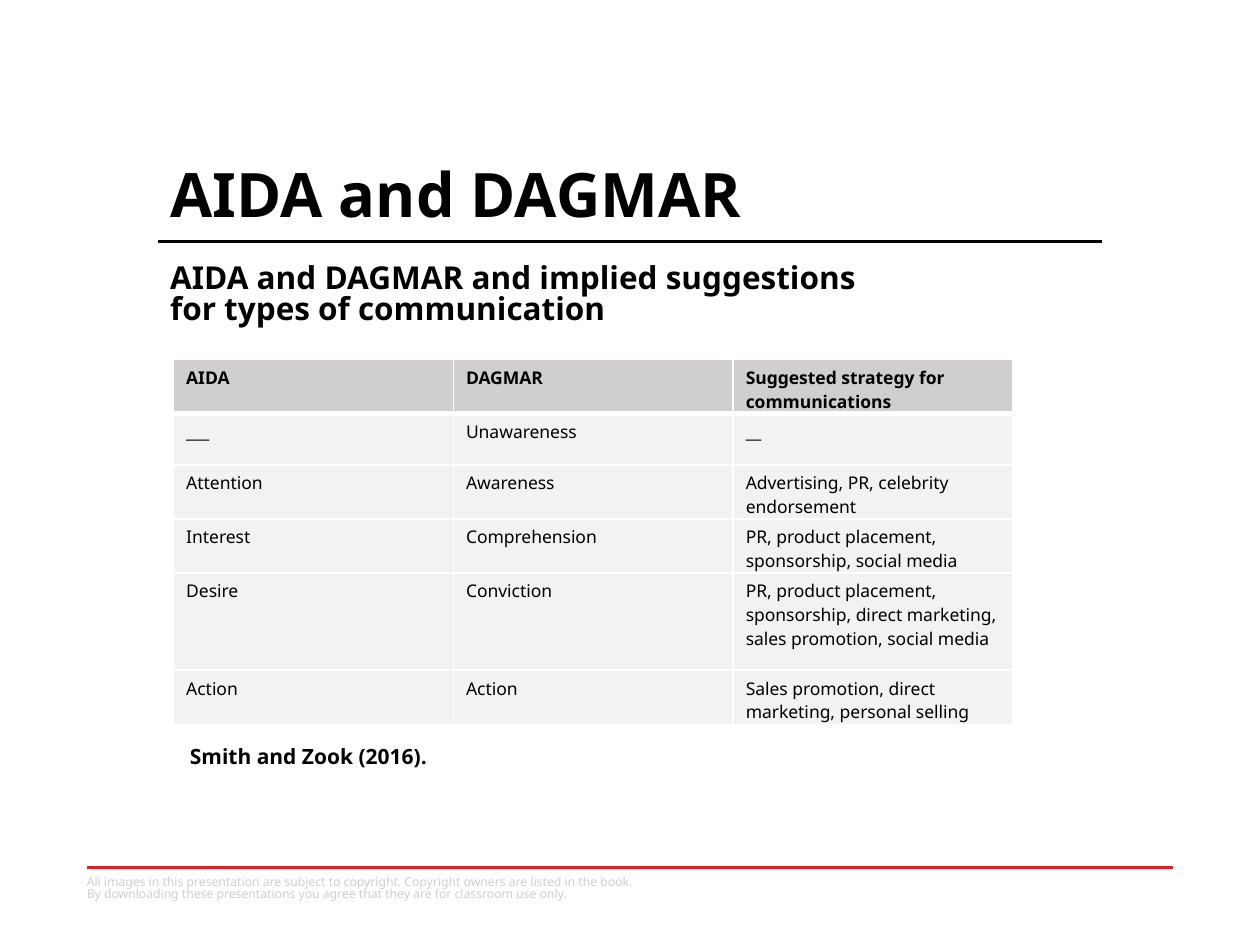
from lxml import etree
from pptx import Presentation
from pptx.dml.color import RGBColor
from pptx.enum.shapes import MSO_CONNECTOR
from pptx.enum.text import MSO_ANCHOR
from pptx.oxml.ns import qn
from pptx.util import Cm, Pt

FONT = "Noto Sans"
COLORS = {
    "text": "000000",
    "accent": "D7222A",
    "header": "D0CECE",
    "body": "F2F2F2",
    "border": "FFFFFF",
    "notice": "D0CECE",
}

TITLE = "AIDA and DAGMAR"
SUBTITLE = ["AIDA and DAGMAR and implied suggestions ", "for types of communication"]
CITATION = "Smith and Zook (2016)."
NOTICE = [
    "All images in this presentation are subject to copyright. "
    "Copyright owners are listed in the book. ",
    "By downloading these presentations you agree that they are for classroom use only.",
]
ROWS = [
    ("AIDA", "DAGMAR", "Suggested strategy for communications"),
    ("___", "Unawareness", "__"),
    ("Attention", "Awareness", "Advertising, PR, celebrity endorsement"),
    ("Interest", "Comprehension", "PR, product placement, sponsorship, social media"),
    ("Desire", "Conviction",
     "PR, product placement, sponsorship, direct marketing, sales promotion, social media"),
    ("Action", "Action", "Sales promotion, direct marketing, personal selling"),
]
ROW_HEIGHTS = [1.09, 1.03, 1.09, 1.09, 1.96, 1.09]
COLUMN_WIDTH = 5.64

# Rules: left, right, y, colour, width in points
RULES = [
    (1.75, 23.65, 17.48, "accent", 1.75),
    (3.18, 22.22, 4.87, "text", 2),
]


def color(name):
    return RGBColor.from_string(COLORS[name])


def write(frame, lines, size, bold=False, color_name="text", spacing=None):
    """Write lines as one paragraph with line breaks between them."""
    frame.word_wrap = True
    paragraph = frame.paragraphs[0]
    if spacing:
        paragraph.line_spacing = spacing
    for index, line in enumerate(lines):
        if index:
            paragraph.add_line_break()
        run = paragraph.add_run()
        run.text = line
        run.font.name = FONT
        run.font.size = Pt(size)
        run.font.bold = bold
        run.font.color.rgb = color(color_name)


def add_text(slide, box, lines, size, **style):
    shape = slide.shapes.add_textbox(*[Cm(value) for value in box])
    write(shape.text_frame, lines, size, **style)


def add_rule(slide, left, right, y, color_name, width):
    rule = slide.shapes.add_connector(
        MSO_CONNECTOR.STRAIGHT, Cm(left), Cm(y), Cm(right), Cm(y))
    rule.line.color.rgb = color(color_name)
    rule.line.width = Pt(width)
    etree.SubElement(rule._element.spPr, qn("a:effectLst"))


def set_borders(cell, widths):
    properties = cell._tc.get_or_add_tcPr()
    for side, width in widths.items():
        line = etree.SubElement(properties, qn(f"a:ln{side}"), w=str(Pt(width)))
        fill = etree.SubElement(line, qn("a:solidFill"))
        etree.SubElement(fill, qn("a:srgbClr"), val=COLORS["border"])


def add_strategy_table(slide):
    table = slide.shapes.add_table(
        len(ROWS), len(ROWS[0]), Cm(3.5), Cm(7.25),
        Cm(COLUMN_WIDTH * len(ROWS[0])), Cm(sum(ROW_HEIGHTS))).table
    for column in table.columns:
        column.width = Cm(COLUMN_WIDTH)
    for row_index, (texts, height) in enumerate(zip(ROWS, ROW_HEIGHTS)):
        table.rows[row_index].height = Cm(height)
        is_header = row_index == 0
        for column_index, text in enumerate(texts):
            cell = table.cell(row_index, column_index)
            cell.margin_bottom = 0
            set_borders(cell, {"L": 1, "R": 1,
                               "T": 3 if row_index == 1 else 1,
                               "B": 3 if is_header else 1})
            cell.fill.solid()
            cell.fill.fore_color.rgb = color("header" if is_header else "body")
            write(cell.text_frame, [text], 10, bold=is_header)


def main():
    presentation = Presentation()
    presentation.slide_width, presentation.slide_height = Cm(25.4), Cm(19.05)
    slide = presentation.slides.add_slide(presentation.slide_layouts[5])

    # Rules under the title and above the notice
    for rule in RULES:
        add_rule(slide, *rule)

    # Title
    title = slide.shapes.title
    title.left, title.top, title.width, title.height = Cm(3.18), Cm(1.02), Cm(19.02), Cm(3.68)
    title.text_frame.vertical_anchor = MSO_ANCHOR.BOTTOM
    title.text_frame.margin_bottom = Cm(0.05)
    write(title.text_frame, [TITLE], 35, bold=True, spacing=0.9)
    title.text_frame.paragraphs[0].alignment = 1

    # Subtitle, table, citation and notice
    add_text(slide, (3.18, 5.23, 19.05, 1.8), SUBTITLE, 18, bold=True, spacing=0.8)
    add_strategy_table(slide)
    add_text(slide, (3.58, 14.86, 8.15, 0.76), [CITATION], 12, bold=True)
    add_text(slide, (1.5, 17.55, 12.7, 0.86), NOTICE, 7, color_name="notice", spacing=0.84)

    presentation.save("out.pptx")


if __name__ == "__main__":
    main()
